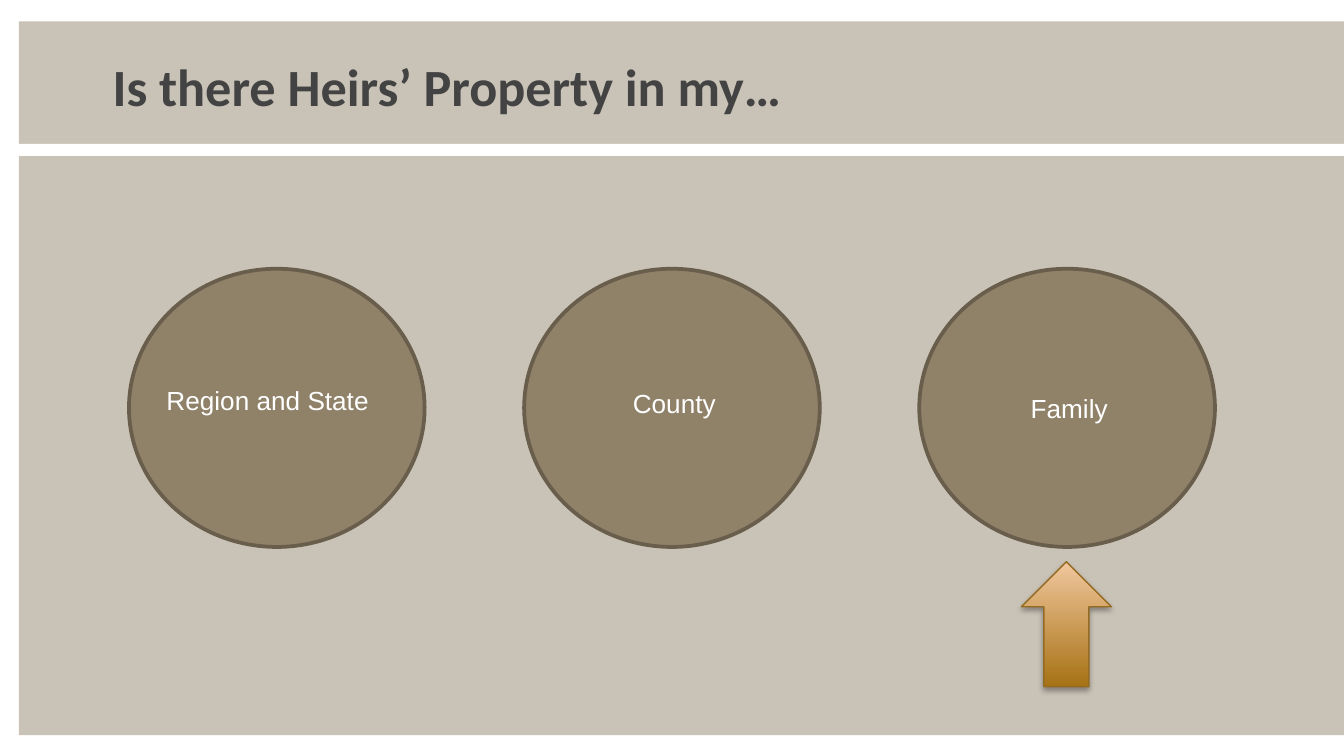
from lxml import etree
from pptx import Presentation
from pptx.dml.color import RGBColor
from pptx.enum.shapes import MSO_SHAPE
from pptx.enum.text import MSO_ANCHOR
from pptx.oxml.ns import qn
from pptx.util import Inches, Pt

RECTANGLE, OVAL, UP_ARROW = MSO_SHAPE.RECTANGLE, MSO_SHAPE.OVAL, MSO_SHAPE.UP_ARROW
TOP, MIDDLE = MSO_ANCHOR.TOP, MSO_ANCHOR.MIDDLE

COLORS = {
    "white": "FFFFFF",
    "title": "434343",
    "taupe": "908269",
    "outline": "695E4C",
    "arrow_dark": "A77215",
    "arrow_light": "F1C79D",
    "arrow_line": "956B22",
    "shadow": "000000",
}


def rgb(name):
    return RGBColor.from_string(COLORS[name])


def add_figure(page, kind, box, fill=None, line=None, line_width=1):
    figure = page.shapes.add_shape(kind, *map(Inches, box))
    figure.shadow.inherit = False
    if fill:
        figure.fill.solid()
        figure.fill.fore_color.rgb = rgb(fill)
    if line:
        figure.line.color.rgb = rgb(line)
        figure.line.width = Pt(line_width)
    else:
        figure.line.fill.background()
    return figure


def add_text(page, text, box, size=14, font="Arial", color="white",
             bold=False, anchor=TOP, margin=0.05):
    frame = page.shapes.add_textbox(*map(Inches, box)).text_frame
    frame.word_wrap = True
    frame.vertical_anchor = anchor
    frame.margin_top = frame.margin_bottom = Inches(margin)
    span = frame.paragraphs[0].add_run()
    span.text = text
    span.font.size = Pt(size)
    span.font.name = font
    span.font.bold = bold
    span.font.color.rgb = rgb(color)


def add_alpha(color_element, percent):
    etree.SubElement(color_element, qn("a:alpha"), val=str(percent * 1000))


def add_shadow(figure, blur, distance, percent):
    """Cast a soft shadow straight down; blur and distance in points."""
    effects = figure._element.spPr.find(qn("a:effectLst"))
    shadow = etree.SubElement(
        effects, qn("a:outerShdw"), blurRad=str(Pt(blur)), dist=str(Pt(distance)),
        dir=str(90 * 60000), rotWithShape="0")
    color = etree.SubElement(shadow, qn("a:srgbClr"), val=COLORS["shadow"])
    add_alpha(color, percent)


def add_backdrop(page, box):
    """Tinted panel, split by a white band below the title."""
    left, top, width, height = box
    panel = add_figure(page, RECTANGLE, box, "taupe")
    add_alpha(panel._element.spPr.find(qn("a:solidFill"))[0], 48)
    add_figure(page, RECTANGLE, (0, top + 0.91, left + width, 0.09), "white")


def add_circles(page, box, labels):
    """Equal circles across the box; each label has its offset and width."""
    left, top, width, height = box
    circle_width = 2.2
    step = (width - circle_width) / (len(labels) - 1)
    for index in range(len(labels)):
        add_figure(page, OVAL, (left + index * step, top, circle_width, height),
                   "taupe", "outline", 2)
    for index, (text, dx, dy, label_width) in enumerate(labels):
        add_text(page, text, (left + index * step + dx, top + dy, label_width, 0.34))


def add_pointer(page, box):
    arrow = add_figure(page, UP_ARROW, box, line="arrow_line", line_width=0.75)
    arrow.fill.gradient()
    arrow.fill.gradient_angle = 90
    for stop, name in zip(arrow.fill.gradient_stops, ("arrow_dark", "arrow_light")):
        stop.color.rgb = rgb(name)
    add_shadow(arrow, blur=3.1, distance=1.8, percent=34)


def main():
    deck = Presentation()
    deck.slide_width = Inches(10)
    deck.slide_height = deck.slide_width * 9 // 16
    page = deck.slides.add_slide(deck.slide_layouts[6])
    add_backdrop(page, (0.14, 0.16, 9.86, 5.31))
    add_text(page, "Is there Heirs’ Property in my…", (0.74, 0.15, 7.26, 0.98),
             size=28, font="Calibri", color="title", bold=True,
             anchor=MIDDLE, margin=0.1)
    add_circles(page, (0.96, 2, 8.08, 2.07), [
        ("Region and State", 0.18, 0.81, 1.84),
        ("County", 0.71, 0.83, 1.12),
        ("Family", 0.73, 0.87, 1.28),
    ])
    add_pointer(page, (7.6, 4.18, 0.67, 0.93))
    deck.save("out.pptx")


if __name__ == "__main__":
    main()
